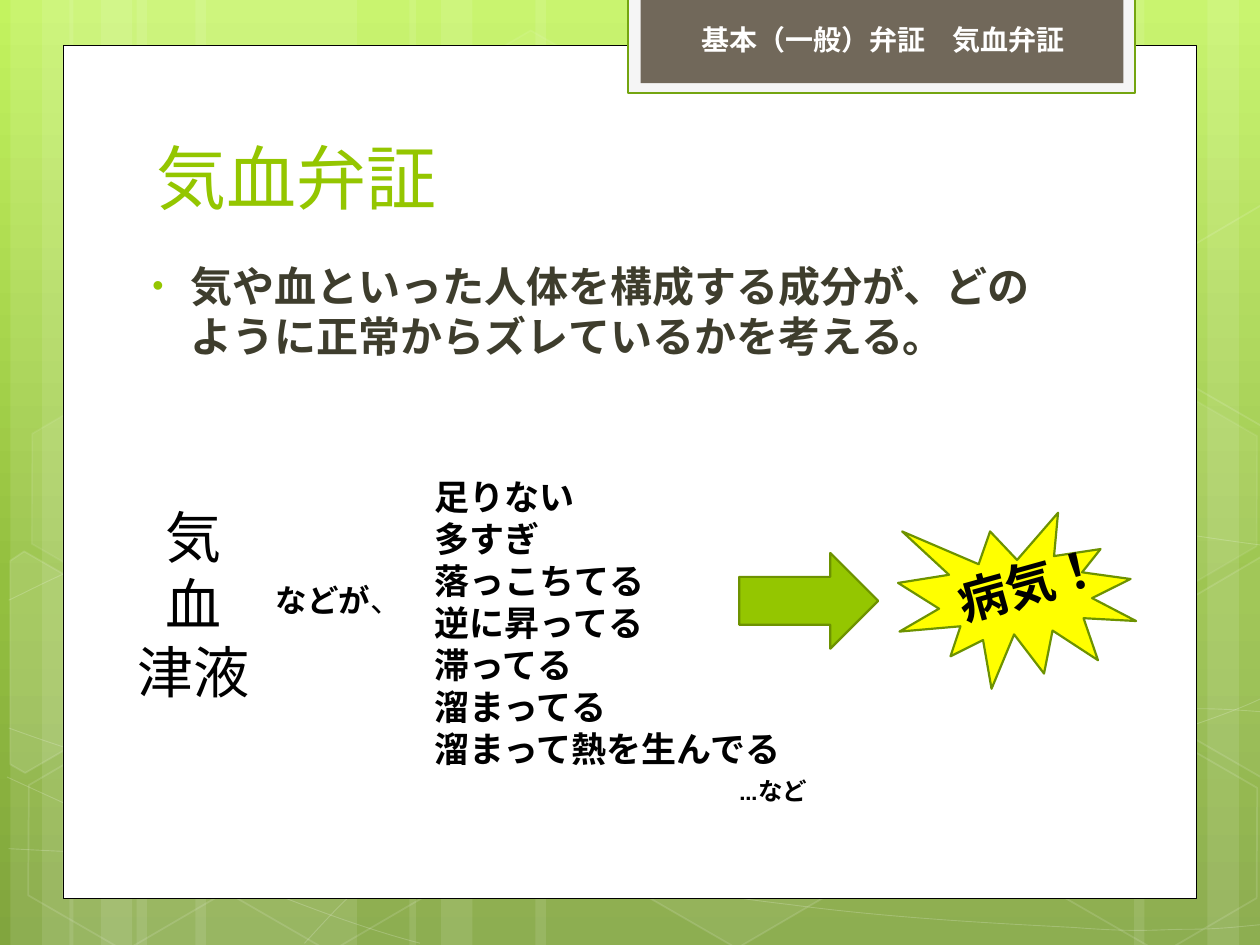
from copy import deepcopy

from lxml.etree import SubElement
from pptx import Presentation
from pptx.dml.color import RGBColor
from pptx.enum.lang import MSO_LANGUAGE_ID
from pptx.enum.shapes import MSO_SHAPE
from pptx.enum.text import MSO_ANCHOR, PP_ALIGN
from pptx.oxml import parse_xml
from pptx.oxml.ns import nsdecls, qn
from pptx.util import Pt

WHITE = RGBColor(0xFF, 0xFF, 0xFF)
BLACK = RGBColor(0x00, 0x00, 0x00)
GREEN = RGBColor(0x94, 0xC6, 0x00)
DARK_GREEN = RGBColor(0x6D, 0x92, 0x00)
TAB_GREEN = RGBColor(0x74, 0xA5, 0x10)
TAB_BORDER = RGBColor(0xF5, 0xF5, 0xF5)
BROWN = RGBColor(0x71, 0x68, 0x5A)
OLIVE = RGBColor(0x3E, 0x3D, 0x2D)
YELLOW = RGBColor(0xFF, 0xFF, 0x00)
SKY = [(0, RGBColor(0xC3, 0xF3, 0x5F)), (0.62, RGBColor(0x93, 0xBF, 0x3F)),
       (1, RGBColor(0x81, 0xA5, 0x3E))]
LATIN = "TeX Gyre Adventor"
JAPANESE = "Noto Sans CJK JP"


def paint(shape, fill=None, line=None, width=1, fill_alpha=100, line_alpha=100):
    """Set fill and outline; alphas are opacity in percent, None means no paint."""
    shape.shadow.inherit = False
    for target, color, alpha, place in (
            (shape.fill, fill, fill_alpha, "a:solidFill"),
            (shape.line.fill, line, line_alpha, "a:ln/a:solidFill")):
        if color is None:
            target.background()
            continue
        target.solid()
        target.fore_color.rgb = color
        if alpha < 100:
            solid = shape._element.spPr.find(place, {"a": nsdecls("a").split('"')[1]})
            SubElement(solid[0], qn("a:alpha"), val=str(alpha * 1000))
    if line is not None:
        shape.line.width = Pt(width)


def add_text(box, lines, size, color, bold=False, font=LATIN, align=PP_ALIGN.LEFT):
    textbox = shapes.add_textbox(*(Pt(v) for v in box))
    frame = textbox.text_frame
    frame.word_wrap = True
    frame.text = "\n".join(lines)
    for paragraph in frame.paragraphs:
        paragraph.alignment = align
        style = paragraph.font
        style.size, style.bold, style.name = Pt(size), bold, font
        style.color.rgb = color
        style.language_id = MSO_LANGUAGE_ID.JAPANESE
        SubElement(style._element, qn("a:ea"), typeface=font)
    return textbox


presentation = Presentation()
presentation.slide_width, presentation.slide_height = Pt(720), Pt(540)
slide = presentation.slides.add_slide(presentation.slide_layouts[6])
shapes = slide.shapes

# Background gradient, light at the top
sky = slide.background.fill
sky.gradient()
sky.gradient_angle = 270
stop_list = slide._element.find(".//" + qn("a:gsLst"))
stop_list.append(deepcopy(stop_list[0]))
for stop, (position, color) in zip(sky.gradient_stops, SKY):
    stop.position = position
    stop.color.rgb = color

# Translucent vertical stripes
for left, width in [(78, 126), (6, 36), (24, 60), (111.6, 126), (39.6, 36), (57.6, 60),
                    (528, 126), (690, 36), (648, 60), (306, 222), (234, 36), (252, 60)]:
    stripe = shapes.add_shape(MSO_SHAPE.RECTANGLE, Pt(left), 0, Pt(width), Pt(540))
    paint(stripe, WHITE, fill_alpha=10)

# Faint waves: a start point, then three Bezier points for each piece
waves = [
    [(5, 485), (44, 487), (83, 489), (137, 488), (191, 487), (258, 486), (330, 479),
     (402, 472), (504, 458), (570, 444), (636, 431), (703, 409), (725, 397)],
    [(5, 343), (26, 333), (47, 321), (87, 310), (128, 299), (186, 284), (250, 279),
     (314, 274), (392, 273), (471, 279), (550, 284), (682, 307), (725, 312)],
    [(4, 444), (91, 484), (178, 523), (240, 539)],
    [(5, 416), (27, 424), (50, 432), (92, 443), (134, 454), (197, 472), (257, 485),
     (317, 497), (392, 510), (452, 517), (512, 525), (576, 528), (614, 530),
     (652, 533), (662, 531), (680, 531), (699, 531), (712, 529), (725, 528)],
    [(174, 539), (187, 525), (200, 510), (217, 498), (235, 485), (259, 470), (279, 460),
     (300, 450), (312, 446), (338, 438), (364, 431), (413, 421), (438, 416),
     (464, 411), (467, 411), (490, 410), (512, 407), (547, 405), (572, 405),
     (597, 404), (638, 405), (638, 405), (654, 405), (670, 405), (686, 405),
     (699, 405), (711, 406), (724, 407)],
]
for wave in waves:
    points = [(Pt(x), Pt(y)) for x, y in wave]
    builder = shapes.build_freeform(*points[0])
    builder.add_line_segments(points[1:], close=False)
    curve = builder.convert_to_shape()
    segments = list(curve._element.iter(qn("a:lnTo")))
    for i in range(0, len(segments), 3):
        bezier = parse_xml(f'<a:cubicBezTo {nsdecls("a")}/>')
        segments[i].addprevious(bezier)
        for segment in segments[i:i + 3]:
            bezier.append(segment[0])
            segment.getparent().remove(segment)
    paint(curve, line=WHITE, width=0.5, line_alpha=20)

# Honeycomb: left, top, fill opacity (0 is unfilled), line opacity
for left, top, fill_alpha, line_alpha in [
        (240.5, 26, 4, 8), (357.8, 424, 6, 12), (8, 425.5, 0, 12), (10, 224.6, 7, 8),
        (125.3, 426, 0, 12), (542, 326, 10, 12), (600.5, 427, 0, 12), (600.5, 226, 7, 8)]:
    cell = shapes.add_shape(MSO_SHAPE.HEXAGON, Pt(left), Pt(top), Pt(126), Pt(109.4))
    cell.adjustments[0] = 0.285
    cell.rotation = 30
    paint(cell, WHITE if fill_alpha else None, WHITE, 1, fill_alpha, line_alpha)

# Cells cut off by the slide edges, corners relative to their own left and top
left_cell = [(0, 8.6), (4.2, 0), (68, 0), (99.4, 54.7), (68, 109.4), (58.2, 109.4)]
right_cell = [(0, 54.7), (31, 0), (37.3, 0), (97.9, 104), (94.5, 109.4), (31, 109.4)]
for corners, left, top, fill_alpha in [(left_cell, -23.8, 330.5, 10),
                                       (right_cell, 660.2, 319.7, 4),
                                       (right_cell, 660.2, 118.8, 0)]:
    outline = [(Pt(left + x), Pt(top + y)) for x, y in corners]
    builder = shapes.build_freeform(*outline[0])
    builder.add_line_segments(outline[1:])
    cut_cell = builder.convert_to_shape()
    cut_cell.rotation = 30
    paint(cut_cell, WHITE if fill_alpha else None, WHITE, 1, fill_alpha, 12)

# Page, header tab, arrow and burst
for kind, box, fill, line, width in [
        (MSO_SHAPE.RECTANGLE, (36, 26, 648, 487.2), WHITE, BLACK, 0.5),
        (MSO_SHAPE.RECTANGLE, (359, -1.5, 289.5, 54.7), TAB_BORDER, TAB_GREEN, 1.25),
        (MSO_SHAPE.RECTANGLE, (366, -1.5, 276, 49), BROWN, None, 0),
        (MSO_SHAPE.RIGHT_ARROW, (422.4, 316, 79.4, 54.7), GREEN, DARK_GREEN, 1.25),
        (MSO_SHAPE.EXPLOSION1, (513.2, 293, 136, 100.6), YELLOW, DARK_GREEN, 1.25)]:
    paint(shapes.add_shape(kind, *(Pt(v) for v in box)), fill, line, width)

# Text
title = add_text((82.4, 38.2, 553, 90), ["気血弁証"], 40, GREEN)
title.text_frame.vertical_anchor = MSO_ANCHOR.BOTTOM

body = add_text((74.2, 145.2, 533.5, 87),
                ["気や血といった人体を構成する成分が、どのように正常からズレているかを考える。"],
                24, OLIVE, bold=True)
statement = body.text_frame.paragraphs[0]
statement.space_before = Pt(4.8)
properties = statement._p.pPr
properties.set("marL", str(Pt(27.4)))
properties.set("indent", str(Pt(-21.6)))
for bullet_part in (f'<a:buClr {nsdecls("a")}><a:srgbClr val="{GREEN}"/></a:buClr>',
                    f'<a:buSzPct {nsdecls("a")} val="76000"/>',
                    f'<a:buFont {nsdecls("a")} typeface="Arial"/>',
                    f'<a:buChar {nsdecls("a")} char="•"/>'):
    statement.font._element.addprevious(parse_xml(bullet_part))

add_text((394, 9.4, 311.8, 26.6), ["基本（一般）弁証　気血弁証"], 16, WHITE, bold=True)
add_text((48.2, 283.7, 124.6, 162.7), ["気", "血", "津液"], 32, BLACK, align=PP_ALIGN.CENTER)

states = add_text((241.2, 268.2, 266.4, 201),
                  ["足りない", "多すぎ", "落っこちてる", "逆に昇ってる", "滞ってる",
                   "溜まってる", "溜まって熱を生んでる", "…など"], 20, BLACK, bold=True)
and_so_on = states.text_frame.paragraphs[-1]
and_so_on.font.size = Pt(14)
and_so_on.font.name = JAPANESE
and_so_on.space_before = Pt(3.5)
and_so_on._p.pPr.set("marL", str(Pt(174)))

subject = add_text((150.5, 328.3, 79.2, 28.8), ["などが"], 18, BLACK, bold=True)
comma = subject.text_frame.paragraphs[0].add_run()
comma.text = "、"
comma.font.bold = False

illness = add_text((539, 307.8, 136, 41), ["病気！"], 28, BLACK, bold=True, font=JAPANESE)
illness.rotation = 344.5

presentation.save("out.pptx")
